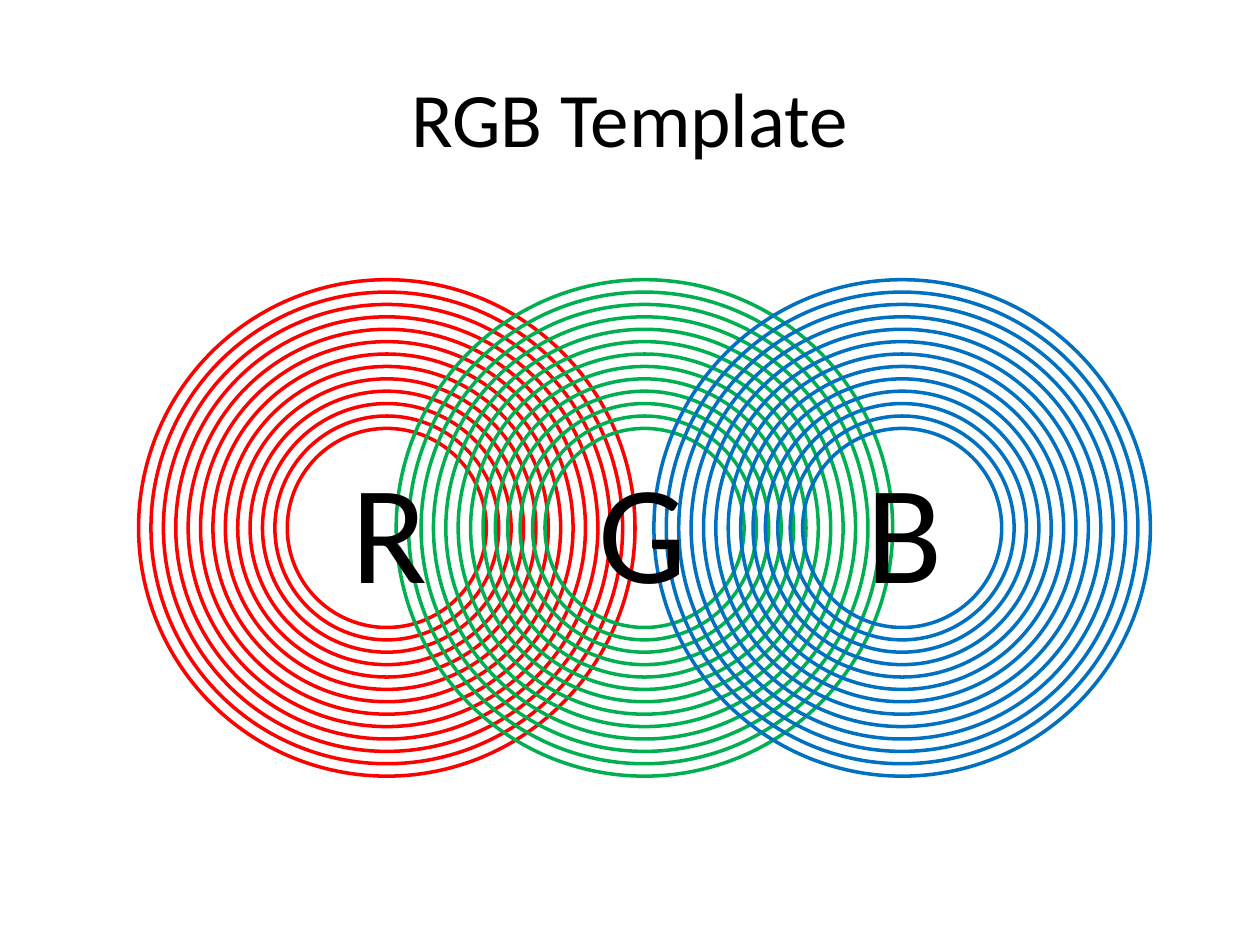
from dataclasses import dataclass

from pptx import Presentation
from pptx.dml.color import RGBColor
from pptx.enum.shapes import MSO_SHAPE
from pptx.enum.text import MSO_ANCHOR, MSO_AUTO_SIZE, PP_ALIGN
from pptx.util import Inches, Pt


@dataclass(frozen=True)
class Theme:
    font: str = "Calibri"
    text: str = "000000"
    red: str = "FF0000"
    green: str = "00B050"
    blue: str = "0070C0"
    title_size: int = 44
    letter_size: int = 80
    ring_width: int = 2


def write_text(frame, text, *, font, size, color, align=PP_ALIGN.LEFT,
               anchor=MSO_ANCHOR.TOP, wrap=True, auto_size=MSO_AUTO_SIZE.NONE):
    frame.word_wrap = wrap
    frame.auto_size = auto_size
    frame.vertical_anchor = anchor
    paragraph = frame.paragraphs[0]
    paragraph.alignment = align
    run = paragraph.add_run()
    run.text = text
    run.font.name = font
    run.font.size = Pt(size)
    run.font.color.rgb = RGBColor.from_string(color)


class SlideBuilder:
    def __init__(self, slide, theme):
        self.slide = slide
        self.theme = theme

    def title(self, text, left, top, width, height):
        shape = self.slide.shapes.title
        shape.left, shape.top = Inches(left), Inches(top)
        shape.width, shape.height = Inches(width), Inches(height)
        write_text(shape.text_frame, text, font=self.theme.font,
                   size=self.theme.title_size, color=self.theme.text,
                   align=PP_ALIGN.CENTER, anchor=MSO_ANCHOR.MIDDLE)

    def rings(self, center_x, center_y, outer, inner, count, color):
        group = self.slide.shapes.add_group_shape()
        step = (outer - inner) / (count - 1)
        for index in range(count):
            diameter = outer - index * step
            ring = group.shapes.add_shape(
                MSO_SHAPE.OVAL,
                Inches(center_x - diameter / 2), Inches(center_y - diameter / 2),
                Inches(diameter), Inches(diameter))
            ring.shadow.inherit = False
            ring.fill.background()
            ring.line.color.rgb = RGBColor.from_string(color)
            ring.line.width = Pt(self.theme.ring_width)

    def letter(self, text, left, top, width, height):
        box = self.slide.shapes.add_textbox(
            Inches(left), Inches(top), Inches(width), Inches(height))
        write_text(box.text_frame, text, font=self.theme.font,
                   size=self.theme.letter_size, color=self.theme.text,
                   wrap=False, auto_size=MSO_AUTO_SIZE.SHAPE_TO_FIT_TEXT)


def main():
    presentation = Presentation()
    presentation.slide_width = Inches(10)
    presentation.slide_height = Inches(7.5)
    theme = Theme()
    slide = presentation.slides.add_slide(presentation.slide_layouts[5])
    builder = SlideBuilder(slide, theme)

    builder.title("RGB Template", 0.5, 0.3, 9, 1.25)
    for index, color in enumerate((theme.red, theme.green, theme.blue)):
        builder.rings(3.07 + index * 2.045, 4.19, outer=3.94, inner=1.58,
                      count=13, color=color)
    for text, left, width in (("R", 2.69, 0.81), ("B", 6.78, 0.81), ("G", 4.65, 0.91)):
        builder.letter(text, left, 3.47, width, 1.45)

    presentation.save("out.pptx")


if __name__ == "__main__":
    main()
